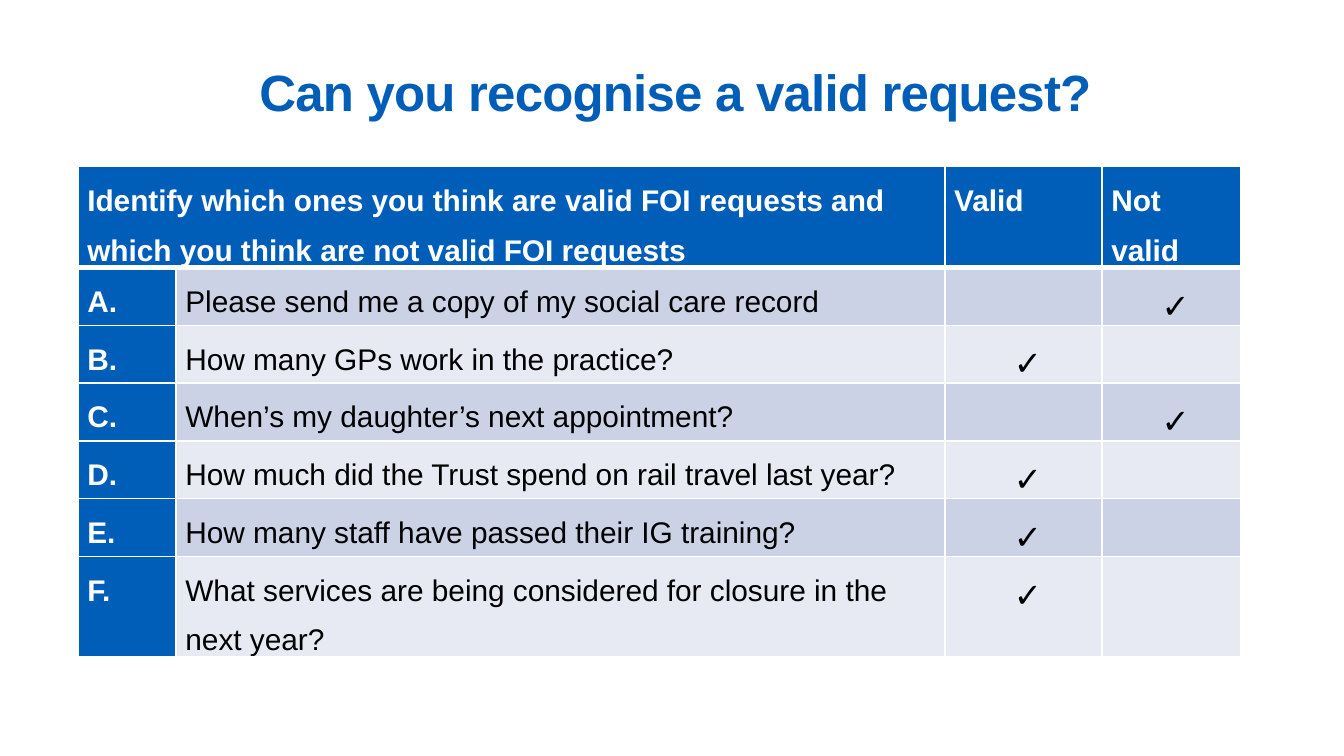
from lxml import etree
from pptx import Presentation
from pptx.dml.color import RGBColor
from pptx.enum.text import MSO_ANCHOR, MSO_AUTO_SIZE, PP_ALIGN
from pptx.oxml.ns import qn
from pptx.util import Inches, Pt

LEFT, CENTER = PP_ALIGN.LEFT, PP_ALIGN.CENTER
TOP = MSO_ANCHOR.TOP
NO_AUTOFIT = MSO_AUTO_SIZE.NONE
TITLE_ONLY = 5
SLIDE_WIDTH = 10
SLIDE_HEIGHT = SLIDE_WIDTH * 9 / 16

COLORS = {"blue": "005EB8", "white": "FFFFFF", "black": "000000",
          "band_dark": "CCD2E6", "band_light": "E7EAF3"}
FORMATS = {
    "title": {"size": Pt(27.3), "bold": True, "color": "blue"},
    "heading": {"size": Pt(16), "bold": True, "color": "white"},
    "request": {"size": Pt(16), "bold": False, "color": "black"},
    "tick": {"size": Pt(18), "bold": True, "color": "black"},
}
TICK = " ✓"
HEADINGS = [
    "Identify which ones you think are valid FOI requests and "
    "which you think are not valid FOI requests",
    "", "Valid", "Not valid",
]
REQUESTS = [
    ("Please send me a copy of my social care record", False),
    ("How many GPs work in the practice?", True),
    ("When’s my daughter’s next appointment?", False),
    ("How much did the Trust spend on rail travel last year?", True),
    ("How many staff have passed their IG training?", True),
    ("What services are being considered for closure in the next year?", True),
]
COLUMN_WIDTHS = [0.73, 5.72, 1.17, 1.03]
ROW_HEIGHT = 0.33


def rgb(name):
    return RGBColor.from_string(COLORS[name])


def format_font(font, style):
    font.name = "Arial"
    for name, value in FORMATS[style].items():
        if name == "color":
            font.color.rgb = rgb(value)
        else:
            setattr(font, name, value)


def set_borders(cell, widths):
    """Draw white cell borders; widths holds points by side L, R, T, B."""
    properties = cell._tc.get_or_add_tcPr()
    for index, (side, width) in enumerate(widths.items()):
        line = etree.Element(qn(f"a:ln{side}"), w=str(Pt(width)))
        fill = etree.SubElement(line, qn("a:solidFill"))
        etree.SubElement(fill, qn("a:srgbClr"), val=COLORS["white"])
        properties.insert(index, line)


def fill_cell(cell, text, style, fill, borders):
    cell.fill.solid()
    cell.fill.fore_color.rgb = rgb(fill)
    set_borders(cell, borders)
    margins = {"margin_left": 0.07, "margin_right": 0.07,
               "margin_top": 0.01, "margin_bottom": 0}
    for name, value in margins.items():
        setattr(cell, name, Inches(value))
    para = cell.text_frame.paragraphs[0]
    para.alignment = CENTER if style == "tick" else LEFT
    para.line_spacing = 1.5
    para.space_after = Pt(6)
    format_font(para.font, style)
    if text:
        span = para.add_run()
        span.text = text
        format_font(span.font, style)


def add_title(page, left, top, width, height):
    title = page.shapes.title
    title.left, title.top = Inches(left), Inches(top)
    title.width, title.height = Inches(width), Inches(height)
    frame = title.text_frame
    frame.auto_size = NO_AUTOFIT
    frame.word_wrap = True
    frame.vertical_anchor = TOP
    for side in ("left", "right", "top", "bottom"):
        setattr(frame, f"margin_{side}", 0)
    para = frame.paragraphs[0]
    para.alignment = LEFT
    span = para.add_run()
    span.text = "Can you recognise a valid request?"
    format_font(span.font, "title")
    span._r.get_or_add_rPr().set("spc", "-40")


def add_request_table(page, left, top):
    row_count = len(REQUESTS) + 1
    table = page.shapes.add_table(
        row_count, len(COLUMN_WIDTHS), Inches(left), Inches(top),
        Inches(sum(COLUMN_WIDTHS)), Inches(ROW_HEIGHT * row_count)).table
    for column, width in zip(table.columns, COLUMN_WIDTHS):
        column.width = Inches(width)
    for row in table.rows:
        row.height = Inches(ROW_HEIGHT)

    table.cell(0, 0).merge(table.cell(0, 1))
    for column, text in enumerate(HEADINGS):
        fill_cell(table.cell(0, column), text, "heading", "blue",
                  {"L": 1, "R": 1, "T": 1, "B": 3})

    for row, (request, valid) in enumerate(REQUESTS, start=1):
        band = "band_dark" if row % 2 else "band_light"
        borders = {"L": 1, "R": 1, "T": 3 if row == 1 else 1, "B": 1}
        letter = "ABCDEF"[row - 1]
        cells = [
            (f"{letter}.", "heading", "blue"),
            (request, "request", band),
            (TICK if valid else "", "tick", band),
            ("" if valid else TICK, "tick", band),
        ]
        for column, (text, style, fill) in enumerate(cells):
            fill_cell(table.cell(row, column), text, style, fill, borders)


def main():
    deck = Presentation()
    deck.slide_width = Inches(SLIDE_WIDTH)
    deck.slide_height = Inches(SLIDE_HEIGHT)
    page = deck.slides.add_slide(deck.slide_layouts[TITLE_ONLY])
    page.background.fill.solid()
    page.background.fill.fore_color.rgb = rgb("white")
    add_title(page, 1.93, 0.45, 6.3, 0.55)
    add_request_table(page, 0.58, 1.24)
    deck.save("out.pptx")


if __name__ == "__main__":
    main()
